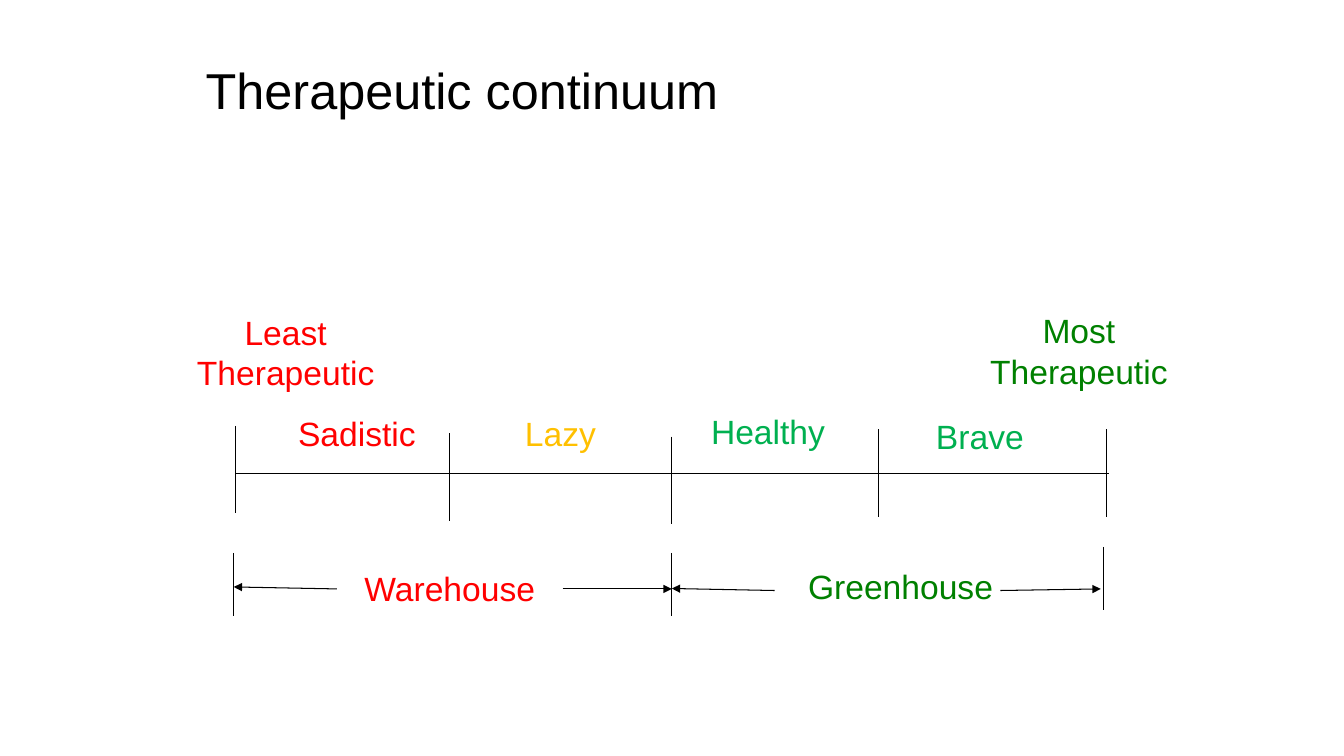
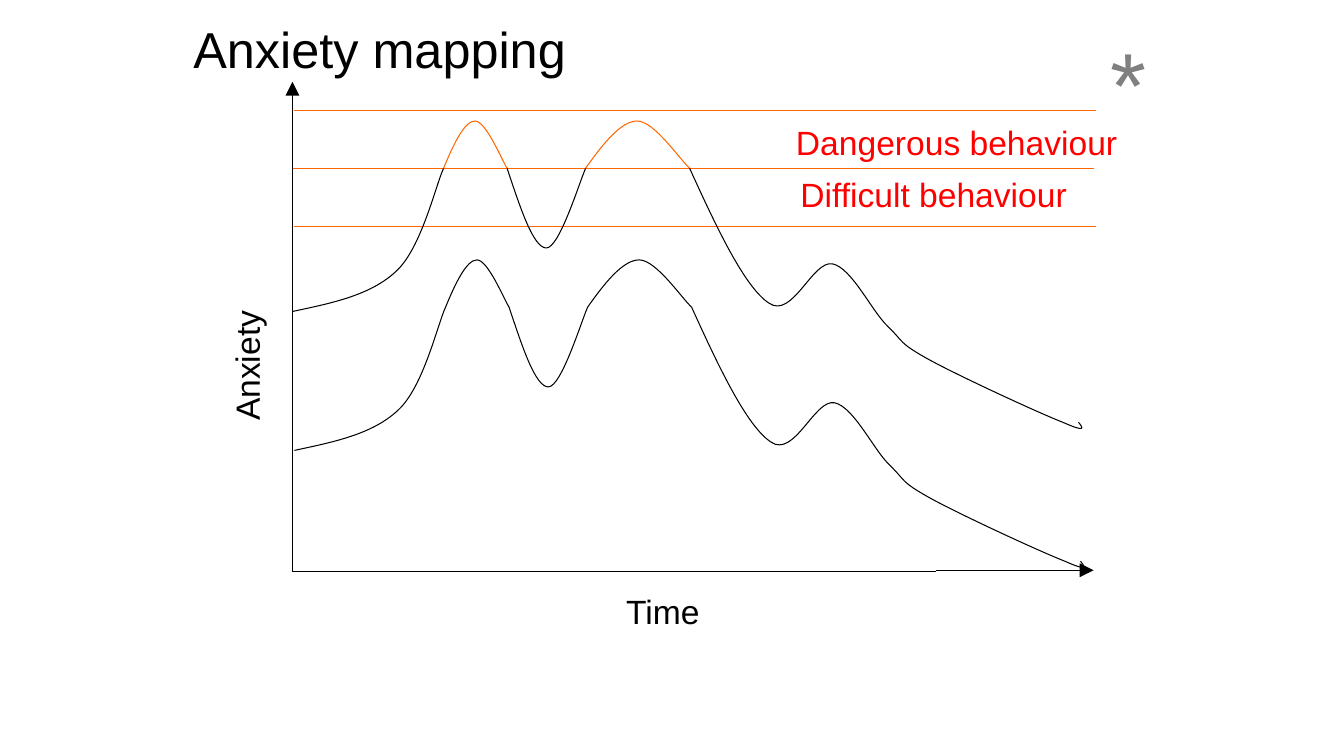
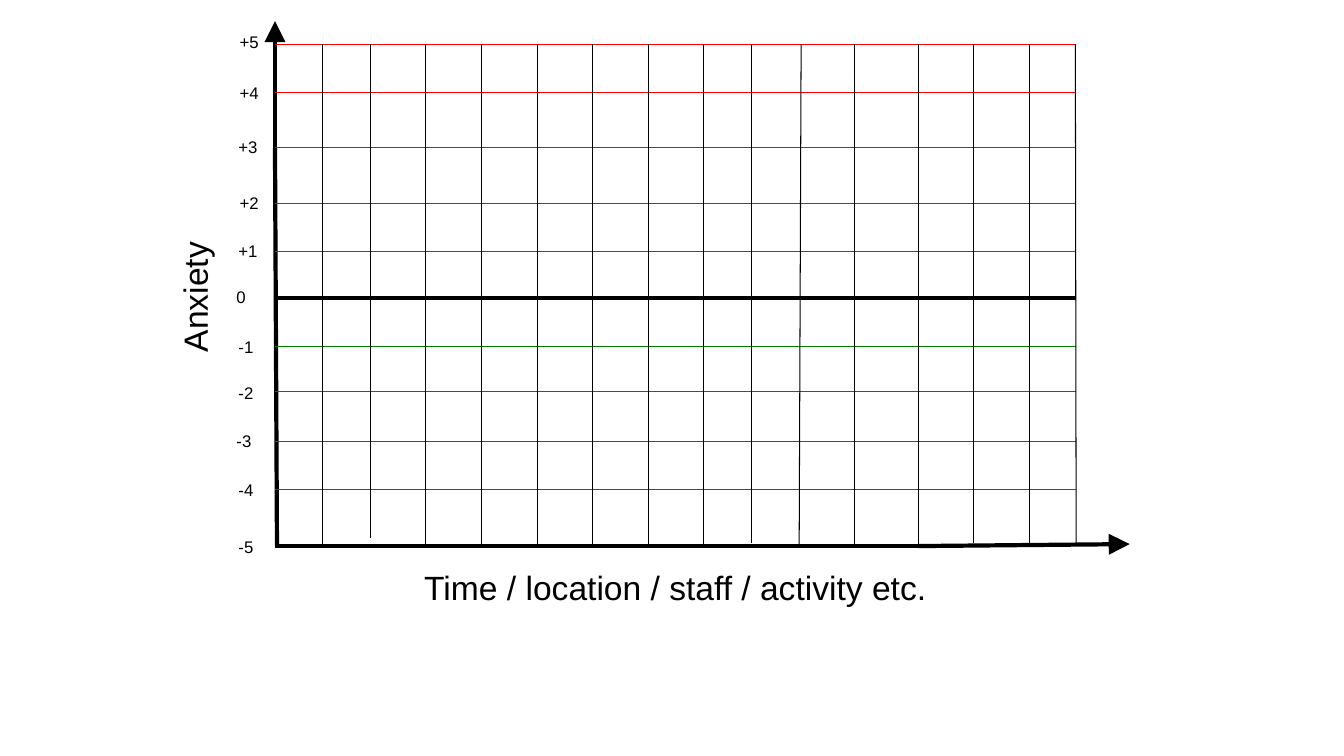
from lxml import etree
from pptx import Presentation
from pptx import util as u
from pptx.dml.color import RGBColor
from pptx.enum import shapes, text
from pptx.oxml.ns import qn

COLOURS = {
    "ink": "000000", "red": "FF0000", "amber": "FFC000", "lime": "00B050",
    "green": "008000", "orange": "FF6600", "grey": "808080",
}
FONT = "Arial"
LEFT, CENTRE = text.PP_ALIGN.LEFT, text.PP_ALIGN.CENTER

ANXIETY_CURVE = [
    ("ink", (0, 3.61), [
        (0.99, 3.4), (1.98, 3.2), (2.62, 2.59),
        (3.25, 2.01), (3.61, 0.43), (3.81, 0)]),
    ("orange", (3.81, 0), [
        (4.06, -0.61), (4.34, -1.19), (4.6, -1.19),
        (4.88, -1.19), (5.28, -0.2), (5.41, 0)]),
    ("ink", (5.41, 0), [
        (5.74, 0.99), (6.07, 2.01), (6.4, 2.01),
        (6.73, 2.01), (7.24, 0.33), (7.39, 0)]),
    ("orange", (7.39, 0), [
        (7.82, -0.61), (8.28, -1.19), (8.69, -1.19),
        (9.12, -1.19), (9.78, -0.2), (10.01, 0)]),
    ("ink", (10.01, 0), [
        (10.69, 1.5), (11.4, 3), (12.01, 3.4),
        (12.6, 3.81), (13.11, 2.31), (13.61, 2.41),
        (14.1, 2.51), (14.6, 3.61), (15.01, 3.99),
        (15.42, 4.39), (15.27, 4.39), (16, 4.8),
        (16.74, 5.21), (18.77, 6.15), (19.41, 6.4),
        (20.04, 6.68), (19.91, 6.53), (19.81, 6.4)]),
]


def rgb(name):
    """Return a named colour."""
    return RGBColor.from_string(COLOURS[name])


def apply(obj, values):
    """Set the attributes of an object from a dict."""
    for key, value in values.items():
        setattr(obj, key, value)


def place(sp, x, y, w, h):
    """Put a shape at a box given in centimetres."""
    apply(sp, {"left": u.Cm(x), "top": u.Cm(y), "width": u.Cm(w), "height": u.Cm(h)})


def write(tf, content, size, colour, align):
    """Fill a text frame and format its paragraphs."""
    tf.text = content
    for p in tf.paragraphs:
        p.alignment = align
        apply(p.font, {"name": FONT, "size": u.Pt(size)})
        p.font.color.rgb = rgb(colour)


def title(s, content, x, y, w, h, anchor):
    """Move and format the title placeholder."""
    sp = s.shapes.title
    place(sp, x, y, w, h)
    write(sp.text_frame, content, 36, "ink", LEFT)
    apply(sp.text_frame, {"vertical_anchor": anchor, "word_wrap": True,
                          "auto_size": text.MSO_AUTO_SIZE.NONE})


def label(sh, content, x, y, w, h=1.3, size=24, colour="ink", align=CENTRE, turn=0):
    """Add a wrapped text box."""
    sp = sh.add_textbox(u.Cm(x), u.Cm(y), u.Cm(w), u.Cm(h))
    write(sp.text_frame, content, size, colour, align)
    apply(sp.text_frame, {"word_wrap": True,
                          "auto_size": text.MSO_AUTO_SIZE.SHAPE_TO_FIT_TEXT})
    sp.rotation = turn
    return sp


def line(sh, x1, y1, x2, y2, colour="ink", weight=0.75, head=None):
    """Add a straight line, with an arrowhead of the given size if wanted."""
    cx = sh.add_connector(shapes.MSO_CONNECTOR.STRAIGHT,
                          *(u.Cm(v) for v in (x1, y1, x2, y2)))
    cx.line.color.rgb = rgb(colour)
    cx.line.width = u.Pt(weight)
    if head:
        etree.SubElement(cx.line._get_or_add_ln(), qn("a:tailEnd"),
                         type="triangle", w=head, len=head)
    etree.SubElement(cx._element.spPr, qn("a:effectLst"))
    return cx


def smooth(sp):
    """Turn each three straight segments of a freeform into a cubic curve."""
    outline = next(sp._element.spPr.iter(qn("a:path")))
    segments = outline.findall(qn("a:lnTo"))
    for i in range(0, len(segments), 3):
        cubic = etree.SubElement(outline, qn("a:cubicBezTo"))
        for segment in segments[i:i + 3]:
            cubic.append(segment[0])
            outline.remove(segment)


def curve(sh, x, y, high_colour):
    """Draw the anxiety curve, with y as the level its peaks cross."""
    for colour, start, controls in ANXIETY_CURVE:
        points = [(u.Cm(x + px), u.Cm(y + py)) for px, py in (start, *controls)]
        fb = sh.build_freeform(*points[0])
        fb.add_line_segments(points[1:], close=False)
        sp = fb.convert_to_shape()
        smooth(sp)
        sp.shadow.inherit = False
        sp.fill.background()
        sp.line.color.rgb = rgb(high_colour if colour == "orange" else colour)
        sp.line.width = u.Pt(0.75)


def axes(sh, x, y, w, h, weight, joint_x, joint_y, lean, rise):
    """Draw both axes of a box, each as a line continued by an arrow."""
    line(sh, x, y + joint_y, x + lean, y + h, weight=weight)
    line(sh, x, y + h, x + joint_x, y + h, weight=weight)
    line(sh, x + joint_x, y + h - rise[0], x + w, y + h - rise[1],
         weight=weight, head="lg")
    line(sh, x, y + joint_y, x, y, weight=weight, head="lg")


def scale(sh, x, y, w):
    """Draw the divided scale with its labels around the line at y."""
    line(sh, x, y, x + w, y)
    for dx, dy in ((0, -1.19), (5.38, -1), (10.99, -0.92), (16.19, -1.1), (21.95, -1.1)):
        line(sh, x + dx, y + dy, x + dx, y + dy + 2.2)
    for content, colour, dx, dy, lw, lh in (
            ("Least Therapeutic", "red", -1.6, -4.19, 5.72, 2.31),
            ("Most\nTherapeutic", "green", 18.71, -4.23, 5.08, 2.31),
            ("Sadistic", "red", 1.06, -1.64, 3.99, 1.3),
            ("Lazy", "amber", 6.19, -1.64, 3.99, 1.3),
            ("Healthy", "lime", 11.42, -1.69, 3.99, 1.3),
            ("Brave", "lime", 16.76, -1.56, 3.99, 1.3)):
        label(sh, content, x + dx, y + dy, lw, lh, colour=colour)


def span(sh, x, y, w, content, colour, label_box, mid, tick, joined=False):
    """Draw a labelled range with an arrow to each end."""
    tick_x, tick_y = tick
    line(sh, x + tick_x, y + tick_y, x + tick_x, y + tick_y + 1.6)
    dx, dy, lw = label_box
    sp = label(sh, content, x + dx, y + dy, lw, colour=colour)
    left = line(sh, x + 2.59, y + mid, x, y + mid - 0.05, head="med")
    right = line(sh, x + 8.28, y + mid, x + w, y + 0.91, head="med")
    if joined:
        left.begin_connect(sp, 1)
        right.begin_connect(sp, 3)


def anxiety_map(s, x, y, w, h):
    """Draw the two curves, thresholds and labels inside a plot box."""
    sh = s.shapes
    for dx, dy in ((0.05, 0.73), (0, 2.18), (0.05, 3.65)):
        line(sh, x + dx, y + dy, x + dx + w, y + dy, "orange")
    curve(sh, x, y + 2.18, "orange")
    curve(sh.add_group_shape().shapes, x + 0.05, y + 5.68, "ink")
    axes(sh, x, y, w, h, 0.75, 16.21, 1.57, 0, (0.03, 0.03))
    label(sh, "Dangerous behaviour", x + 12.44, y + 0.89, 9.6, colour="red", align=LEFT)
    label(sh, "Difficult behaviour", x + 12.55, y + 2.21, 8.61, colour="red", align=LEFT)
    label(sh, "*", x + 20.37, y - 1.52, 1.19, 3.05, 66, "grey", LEFT)
    label(sh, "Time", x + 6.39, y + 12.7, 5.89)
    label(sh, "Anxiety", x - 3.14, y + 6.15, 3.99, align=LEFT, turn=270)


def anxiety_grid(s, x, y, w, h):
    """Draw the blank scoring grid inside a plot box."""
    label(s.shapes, "Anxiety", x - 4.01, y + 5.95, 3.99, align=LEFT, turn=270)
    sh = s.shapes.add_group_shape().shapes
    rows = ((0.58, -1.14, 0.15), (1.8, -1.14, 1.42), (3.19, -1.17, 2.79),
            (4.6, -1.14, 4.19), (5.79, -1.17, 5.41), (6.98, -1.22, 6.58),
            (8.19, -1.17, 7.83), (9.34, -1.17, 9), (10.59, -1.22, 10.2),
            (11.79, -1.17, 11.44), (h, -1.17, 12.86))
    columns = ((1.19, 1.19, h), (2.4, 2.4, 13.03), (3.8, 3.8, h), (5.21, 5.21, h),
               (6.61, 6.61, h), (8, 8, h), (9.41, 9.41, h), (10.8, 10.8, h),
               (12, 12, 13.16), (13.26, 13.21, 13.18), (14.6, 14.6, h),
               (16.21, 16.21, h), (17.6, 17.6, 13.16), (19.01, 19.01, 13.16),
               (20.17, 20.19, 13.16))
    axes(sh, x, y, w, h, 3, 16.21, 3.2, 0.05, (0, 0.05))
    label(sh, "Time / location / staff / activity etc.", x - 0.45, y + 13.63, 21.08)
    for level, (dy, label_x, label_y) in zip(range(5, -6, -1), rows):
        colour = "red" if level > 0 else "green" if level < 0 else "ink"
        if level > -5:
            line(sh, x, y + dy, x + 20.19, y + dy, colour, 0.25 if level else 3)
        label(sh, f"{level:+d}" if level else "0", x + label_x, y + label_y,
              1.35, 0.76, 12, align=LEFT)
    for top_x, foot_x, foot_y in columns:
        line(sh, x + top_x, y + 0.58, x + foot_x, y + foot_y)


def main():
    """Build and save the three slides."""
    prs = Presentation()
    prs.slide_width, prs.slide_height = u.Cm(33.87), u.Cm(19.05)
    title_only, blank = prs.slide_layouts[5], prs.slide_layouts[6]

    s = prs.slides.add_slide(title_only)
    title(s, "Therapeutic continuum", 4.93, 1.35, 23.01, 1.8, text.MSO_ANCHOR.MIDDLE)
    scale(s.shapes, 5.94, 11.92, 22)
    warehouse = s.shapes.add_group_shape().shapes
    line(warehouse, 5.89, 13.93, 5.89, 15.53)
    span(warehouse, 5.89, 13.93, 11.04, "Warehouse", "red",
         (2.6, 0.26, 5.69), 0.91, (11.04, 0), joined=True)
    span(s.shapes.add_group_shape().shapes, 16.93, 13.93, 10.81, "Greenhouse", "green",
         (2.88, 0.21, 5.77), 0.95, (10.88, -0.15))

    s = prs.slides.add_slide(title_only)
    title(s, "Anxiety mapping", 4.62, 0.33, 22.86, 3.18, text.MSO_ANCHOR.TOP)
    anxiety_map(s, 7.37, 2.06, 20.19, 12.34)

    s = prs.slides.add_slide(blank)
    anxiety_grid(s, 6.93, 0.53, 21.54, 13.23)

    prs.save("out.pptx")


if __name__ == "__main__":
    main()
